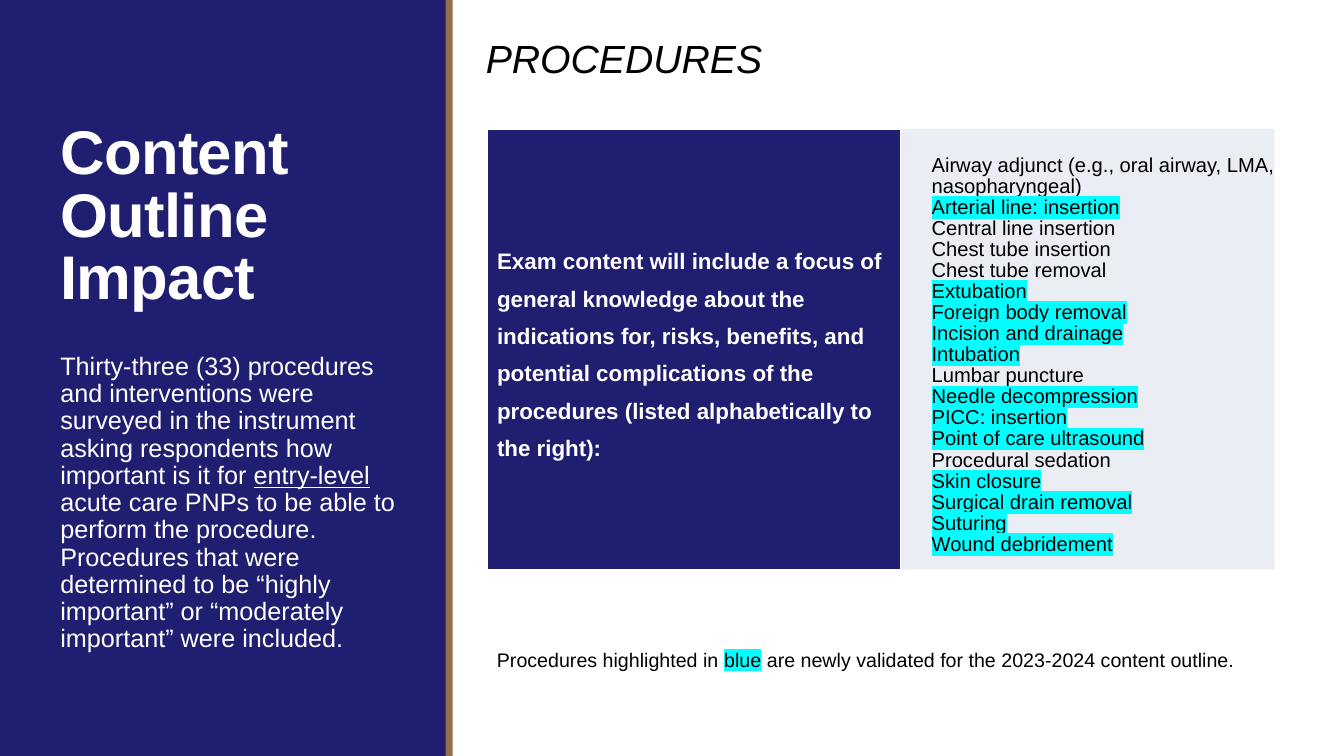
from dataclasses import dataclass

from lxml.etree import SubElement
from pptx import Presentation
from pptx.dml.color import RGBColor
from pptx.enum.shapes import MSO_SHAPE
from pptx.enum.text import MSO_ANCHOR, PP_ALIGN
from pptx.oxml.ns import qn
from pptx.util import Inches, Pt


@dataclass(frozen=True)
class Theme:
    font: str = "Arial"
    navy: str = "201E70"
    bronze: str = "956F47"
    pale: str = "EBEDF5"
    white: str = "FFFFFF"
    black: str = "000000"
    highlight: str = "00FFFF"
    title_size: float = 44
    heading_size: float = 28
    body_size: float = 18
    focus_size: float = 16
    list_size: float = 14.4
    note_size: float = 14


THEME = Theme()

# Each procedure is paired with whether it is newly validated.
PROCEDURES = [
    ("Airway adjunct (e.g., oral airway, LMA, nasopharyngeal)", False),
    ("Arterial line: insertion", True),
    ("Central line insertion", False),
    ("Chest tube insertion", False),
    ("Chest tube removal", False),
    ("Extubation", True),
    ("Foreign body removal", True),
    ("Incision and drainage", True),
    ("Intubation", True),
    ("Lumbar puncture", False),
    ("Needle decompression", True),
    ("PICC: insertion", True),
    ("Point of care ultrasound", True),
    ("Procedural sedation", False),
    ("Skin closure", True),
    ("Surgical drain removal", True),
    ("Suturing", True),
    ("Wound debridement", True),
]


def add_panel(slide, left, top, width, height, color):
    panel = slide.shapes.add_shape(
        MSO_SHAPE.RECTANGLE, Inches(left), Inches(top), Inches(width), Inches(height)
    )
    panel.shadow.inherit = False
    panel.fill.solid()
    panel.fill.fore_color.rgb = RGBColor.from_string(color)
    panel.line.fill.background()
    return panel


def add_text_frame(slide, left, top, width, height, anchor=MSO_ANCHOR.TOP):
    box = slide.shapes.add_textbox(
        Inches(left), Inches(top), Inches(width), Inches(height)
    )
    frame = box.text_frame
    frame.word_wrap = True
    frame.vertical_anchor = anchor
    return frame


def style_paragraph(paragraph, size, color, line_spacing, bold=None, italic=None):
    paragraph.alignment = PP_ALIGN.LEFT
    paragraph.line_spacing = line_spacing
    font = paragraph.font
    font.name = THEME.font
    font.size = Pt(size)
    font.color.rgb = RGBColor.from_string(color)
    font.bold = bold
    font.italic = italic


def add_run(paragraph, text):
    run = paragraph.add_run()
    run.text = text
    return run


def highlight(run):
    marker = SubElement(run.font._element, qn("a:highlight"))
    SubElement(marker, qn("a:srgbClr"), val=THEME.highlight)


def space_around(paragraph):
    paragraph.space_before = Pt(12)
    paragraph.space_after = Pt(2)


def add_heading(slide):
    paragraph = add_text_frame(slide, 4.72, 0.34, 4.96, 0.6).paragraphs[0]
    style_paragraph(paragraph, THEME.heading_size, THEME.black, 0.9, italic=True)
    space_around(paragraph)
    add_run(paragraph, "PROCEDURES")


def add_title(slide):
    frame = add_text_frame(slide, 0.5, 0.65, 3.5, 2.5, MSO_ANCHOR.BOTTOM)
    paragraph = frame.paragraphs[0]
    style_paragraph(paragraph, THEME.title_size, THEME.white, 0.85, bold=True)
    run = add_run(paragraph, "Content Outline Impact")
    run.font._element.set("spc", "-50")


def add_passage(slide, left, top, width, height, size, color, texts):
    """Add one paragraph made of the given texts and return its runs."""
    frame = add_text_frame(slide, left, top, width, height)
    frame.margin_right = 0
    paragraph = frame.paragraphs[0]
    style_paragraph(paragraph, size, color, 0.9)
    space_around(paragraph)
    return [add_run(paragraph, text) for text in texts]


def add_procedure_list(slide):
    frame = add_panel(slide, 8.92, 1.28, 3.72, 4.37, THEME.pale).text_frame
    frame.word_wrap = True
    frame.vertical_anchor = MSO_ANCHOR.TOP
    frame.margin_left, frame.margin_right = Inches(0.32), 0
    frame.margin_top = Inches(0.26)
    for index, (procedure, is_new) in enumerate(PROCEDURES):
        paragraph = frame.add_paragraph() if index else frame.paragraphs[0]
        style_paragraph(paragraph, THEME.list_size, THEME.black, 0.87)
        run = add_run(paragraph, procedure)
        if is_new:
            highlight(run)


def add_focus_table(slide):
    frame = slide.shapes.add_table(
        1, 1, Inches(4.83), Inches(1.28), Inches(4.1), Inches(4.37)
    )
    cell = frame.table.cell(0, 0)
    cell.fill.solid()
    cell.fill.fore_color.rgb = RGBColor.from_string(THEME.navy)
    cell.vertical_anchor = MSO_ANCHOR.MIDDLE
    paragraph = cell.text_frame.paragraphs[0]
    style_paragraph(paragraph, THEME.focus_size, THEME.white, 1.5, bold=True)
    add_run(
        paragraph,
        "Exam content will include a focus of general knowledge about the "
        "indications for, risks, benefits, and potential complications of the "
        "procedures (listed alphabetically to the right):",
    )


def main():
    presentation = Presentation()
    presentation.slide_width = Inches(13.33)
    presentation.slide_height = Inches(7.5)
    slide = presentation.slides.add_slide(presentation.slide_layouts[6])

    add_panel(slide, 0, 0, 4.43, 7.5, THEME.navy)
    add_panel(slide, 4.42, 0, 0.07, 7.5, THEME.bronze)
    add_heading(slide)
    add_title(slide)
    survey_runs = add_passage(
        slide, 0.5, 3.46, 3.5, 3.71, THEME.body_size, THEME.white,
        [
            "Thirty-three (33) procedures and interventions were surveyed in the "
            "instrument asking respondents how important is it for ",
            "entry-level",
            " acute care PNPs to be able to perform the procedure. Procedures that "
            "were determined to be “highly important” or “moderately important” "
            "were included.",
        ],
    )
    survey_runs[1].font.underline = True
    add_procedure_list(slide)
    note_runs = add_passage(
        slide, 4.83, 6.4, 7.82, 0.78, THEME.note_size, THEME.black,
        [
            "Procedures highlighted in ",
            "blue",
            " are newly validated for the 2023-2024 content outline.",
        ],
    )
    highlight(note_runs[1])
    add_focus_table(slide)

    presentation.save("out.pptx")


if __name__ == "__main__":
    main()
